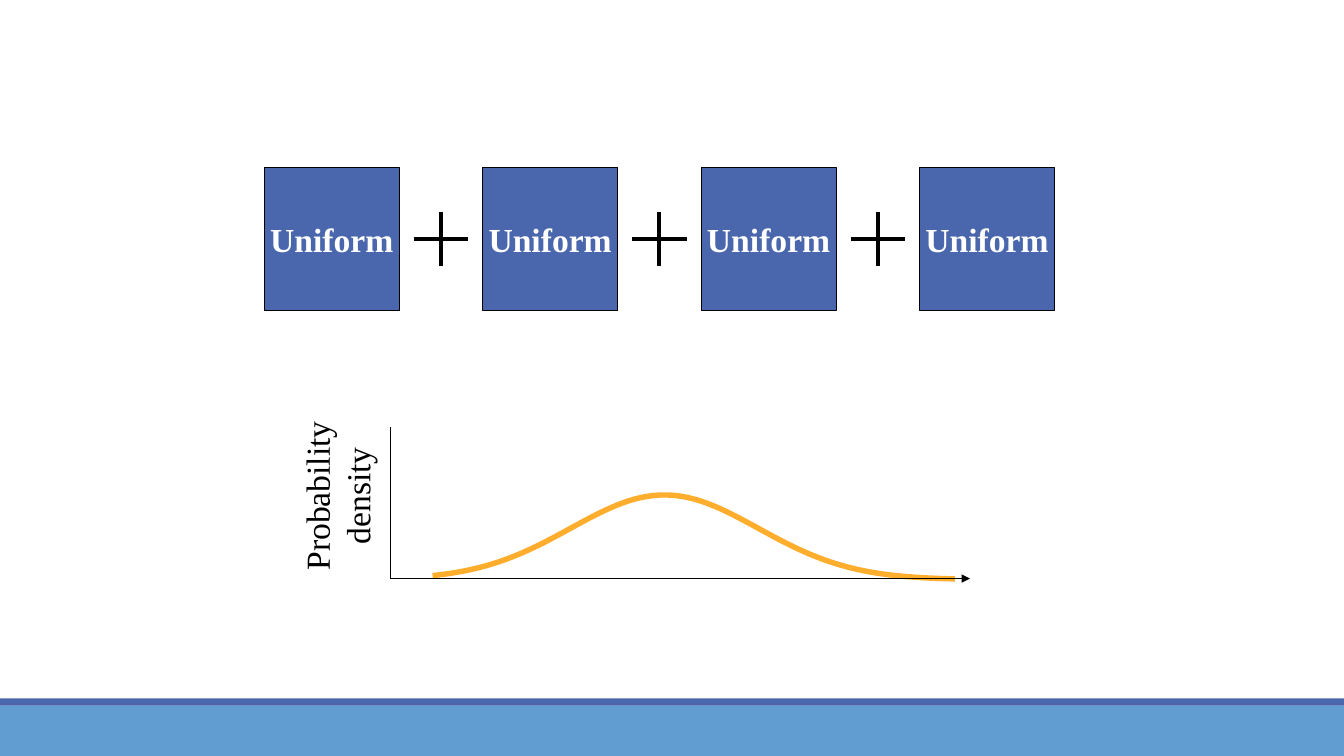
import math

from lxml import etree
from pptx import Presentation
from pptx import util as u
from pptx.dml.color import RGBColor
from pptx.enum import shapes, text
from pptx.oxml import ns

BLACK = RGBColor(0x00, 0x00, 0x00)
WHITE = RGBColor(0xFF, 0xFF, 0xFF)
BLUE = RGBColor(0x4A, 0x66, 0xAC)
LIGHT_BLUE = RGBColor(0x62, 0x9D, 0xD1)
ORANGE = RGBColor(0xFF, 0xAD, 0x2C)


class SlideBuilder:
    font_name = "Times New Roman"
    font_size = u.Pt(24)

    def __init__(self, slide):
        self.slide = slide

    def set_label(self, shape, content, color, bold=False):
        frame = shape.text_frame
        frame.text = content
        frame.word_wrap = False
        for paragraph in frame.paragraphs:
            paragraph.alignment = text.PP_ALIGN.CENTER
            for run in paragraph.runs:
                run.font.name = self.font_name
                run.font.size = self.font_size
                run.font.bold = bold
                run.font.color.rgb = color

    def rectangle(self, left, top, width, height, fill, outlined=False):
        shape = self.slide.shapes.add_shape(
            shapes.MSO_SHAPE.RECTANGLE,
            u.Inches(left), u.Inches(top), u.Inches(width), u.Inches(height))
        shape.shadow.inherit = False
        shape.fill.solid()
        shape.fill.fore_color.rgb = fill
        if outlined:
            shape.line.color.rgb = BLACK
            shape.line.width = u.Pt(0.75)
        else:
            shape.line.fill.background()
        return shape

    def labelled_box(self, left, top, width, height, label):
        shape = self.rectangle(left, top, width, height, BLUE, outlined=True)
        shape.text_frame.vertical_anchor = text.MSO_ANCHOR.MIDDLE
        self.set_label(shape, label, WHITE, bold=True)

    def line(self, x1, y1, x2, y2, width, arrow=False):
        connector = self.slide.shapes.add_connector(
            shapes.MSO_CONNECTOR.STRAIGHT,
            u.Inches(x1), u.Inches(y1), u.Inches(x2), u.Inches(y2))
        connector.line.color.rgb = BLACK
        connector.line.width = u.Pt(width)
        properties = connector._element.spPr
        if arrow:
            outline = properties.find(ns.qn("a:ln"))
            etree.SubElement(outline, ns.qn("a:tailEnd"), type="triangle")
        etree.SubElement(properties, ns.qn("a:effectLst"))

    def plus(self, x, y, arm):
        self.line(x, y - arm, x, y + arm, 3)
        self.line(x - arm, y, x + arm, y, 3)

    def curve(self, points, color, width):
        vertices = [(u.Inches(x), u.Inches(y)) for x, y in points]
        outline = self.slide.shapes.build_freeform(*vertices[0])
        outline.add_line_segments(vertices[1:], close=False)
        shape = outline.convert_to_shape()
        shape.shadow.inherit = False
        shape.fill.background()
        shape.line.color.rgb = color
        shape.line.width = u.Pt(width)

    def vertical_label(self, left, top, width, height, content):
        shape = self.slide.shapes.add_textbox(
            u.Inches(left), u.Inches(top), u.Inches(width), u.Inches(height))
        shape.rotation = 270
        self.set_label(shape, content, BLACK)
        shape.text_frame.auto_size = text.MSO_AUTO_SIZE.SHAPE_TO_FIT_TEXT


def bell_points():
    start, length, steps = 4.29, 5.18, 80
    mean, deviation, peak, baseline = 6.59, 0.93, 0.84, 5.75
    for step in range(steps + 1):
        x = start + length * step / steps
        height = peak * math.exp(-((x - mean) / deviation) ** 2 / 2)
        yield x, baseline - height


def main():
    presentation = Presentation()
    presentation.slide_width = u.Inches(13.33)
    presentation.slide_height = u.Inches(7.5)
    builder = SlideBuilder(
        presentation.slides.add_slide(presentation.slide_layouts[6]))

    builder.rectangle(0, 7, 13.33, 0.5, LIGHT_BLUE)
    builder.rectangle(0, 6.93, 13.33, 0.07, BLUE)

    builder.curve(bell_points(), ORANGE, 3.88)
    origin_x, origin_y = 3.87, 5.74
    builder.line(origin_x, origin_y, 9.62, origin_y, 0.75, arrow=True)
    builder.line(origin_x, origin_y, origin_x, 4.24, 0.75)
    builder.vertical_label(2.5, 4.47, 1.68, 0.9, "Probability\ndensity")

    box_count, box_top, box_width, box_height = 4, 1.66, 1.34, 1.42
    first_left, pitch = 2.62, 6.5 / 3
    for index in range(box_count):
        left = first_left + index * pitch
        builder.labelled_box(left, box_top, box_width, box_height, "Uniform")
        if index < box_count - 1:
            plus_x = left + (box_width + pitch) / 2
            builder.plus(plus_x, box_top + box_height / 2, 0.27)

    presentation.save("out.pptx")


if __name__ == "__main__":
    main()
